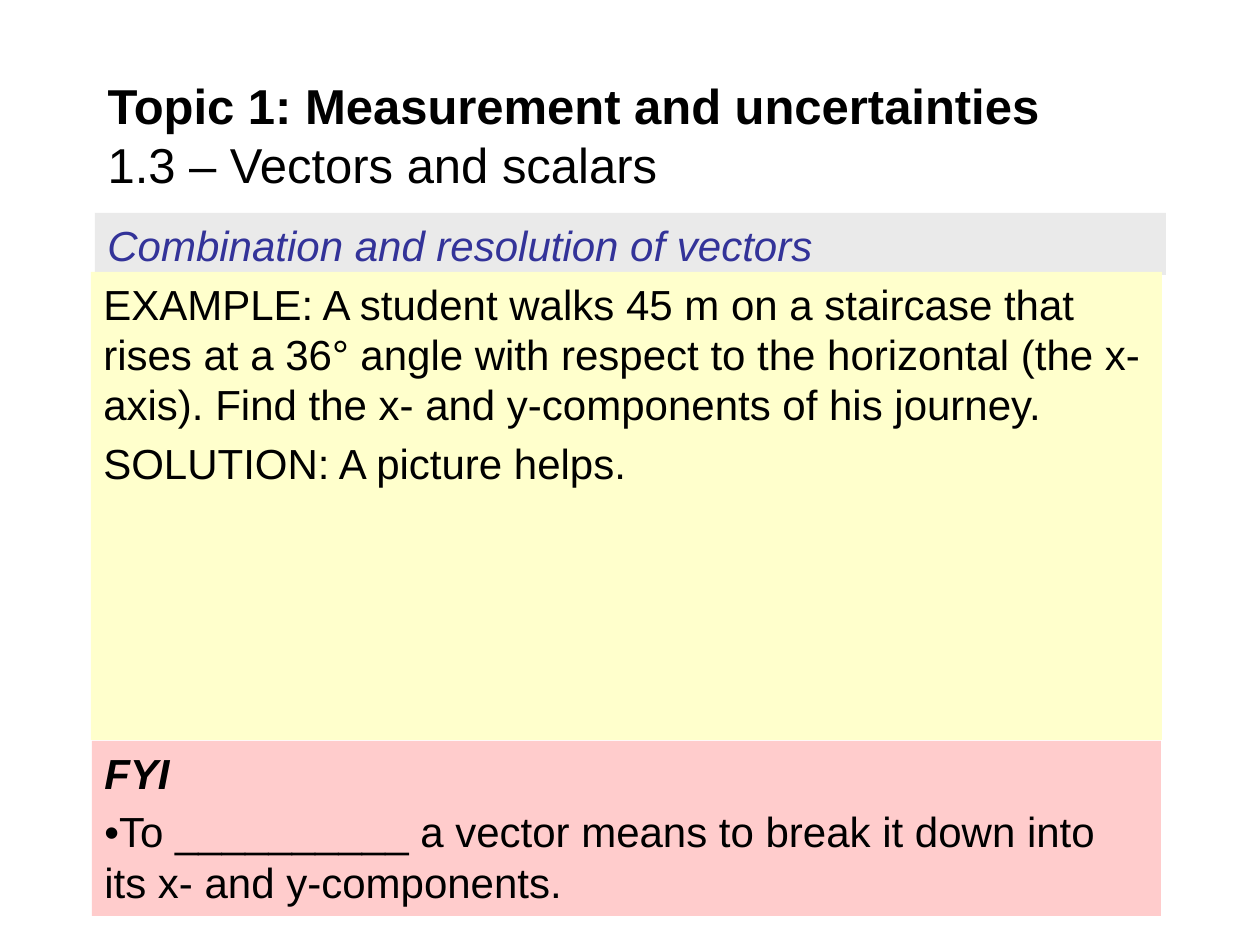
from dataclasses import dataclass

from pptx import Presentation
from pptx import util as u
from pptx.dml.color import RGBColor
from pptx.enum import shapes, text

PX = u.Inches(1) / 126


@dataclass(frozen=True)
class Theme:
    font: str = "Arial"
    title_size: int = 28
    body_size: int = 24
    ink: str = "000000"
    heading: str = "333399"
    heading_fill: str = "EAEAEA"
    example_fill: str = "FFFFCC"
    fyi_fill: str = "FFCCCC"


THEME = Theme()


def px(n):
    return u.Emu(round(n * PX))


def place(sp, left, top, width, height):
    sp.left, sp.top, sp.width, sp.height = map(px, (left, top, width, height))


def style_run(r, size, color=THEME.ink, bold=False, italic=False):
    r.font.name = THEME.font
    r.font.size = u.Pt(size)
    r.font.bold = bold
    r.font.italic = italic
    r.font.color.rgb = RGBColor.from_string(color)


def add_title(slide, box, topic, section):
    """Put a bold topic line over a plain section line."""
    title = slide.shapes.title
    place(title, *box)
    tf = title.text_frame
    tf.word_wrap = True
    tf.auto_size = text.MSO_AUTO_SIZE.NONE
    tf.vertical_anchor = text.MSO_ANCHOR.MIDDLE
    p = tf.paragraphs[0]
    p.text = f"{topic}\v{section}"
    p.alignment = text.PP_ALIGN.LEFT
    for r, bold in zip(p.runs, (True, False)):
        style_run(r, THEME.title_size, bold=bold)


def add_panel(slide, box, fill, paragraphs, **style):
    """Add a filled box of paragraphs; style applies to every run."""
    sp = slide.shapes.add_shape(shapes.MSO_SHAPE.RECTANGLE, *map(px, box))
    sp.shadow.inherit = False
    sp.fill.solid()
    sp.fill.fore_color.rgb = RGBColor.from_string(fill)
    sp.line.fill.background()
    tf = sp.text_frame
    tf.word_wrap = True
    tf.vertical_anchor = text.MSO_ANCHOR.TOP
    tf.text = "\n".join(paragraphs)
    for p in tf.paragraphs:
        p.alignment = text.PP_ALIGN.LEFT
        p.space_before = u.Pt(THEME.body_size * 0.2)
        for r in p.runs:
            style_run(r, THEME.body_size, **style)
    return sp


def main():
    prs = Presentation()
    prs.slide_width, prs.slide_height = px(1260), px(945)
    slide = prs.slides.add_slide(prs.slide_layouts[5])

    add_panel(slide, (95, 213, 1071, 62), THEME.heading_fill,
              ["Combination and resolution of vectors"],
              color=THEME.heading, italic=True)
    add_title(slide, (95, 73, 1071, 123),
              "Topic 1: Measurement and uncertainties",
              "1.3 – Vectors and scalars")
    add_panel(slide, (91, 272, 1071, 468), THEME.example_fill,
              ["EXAMPLE: A student walks 45 m on a staircase that rises at a "
               "36° angle with respect to the horizontal (the x-axis). Find "
               "the x- and y-components of his journey.",
               "SOLUTION: A picture helps."])
    fyi = add_panel(slide, (92, 741, 1069, 175), THEME.fyi_fill,
                    ["FYI",
                     "•To __________ a vector means to break it down into "
                     "its x- and y-components."])
    label = fyi.text_frame.paragraphs[0].runs[0]
    label.font.bold = label.font.italic = True

    prs.save("out.pptx")


if __name__ == "__main__":
    main()
